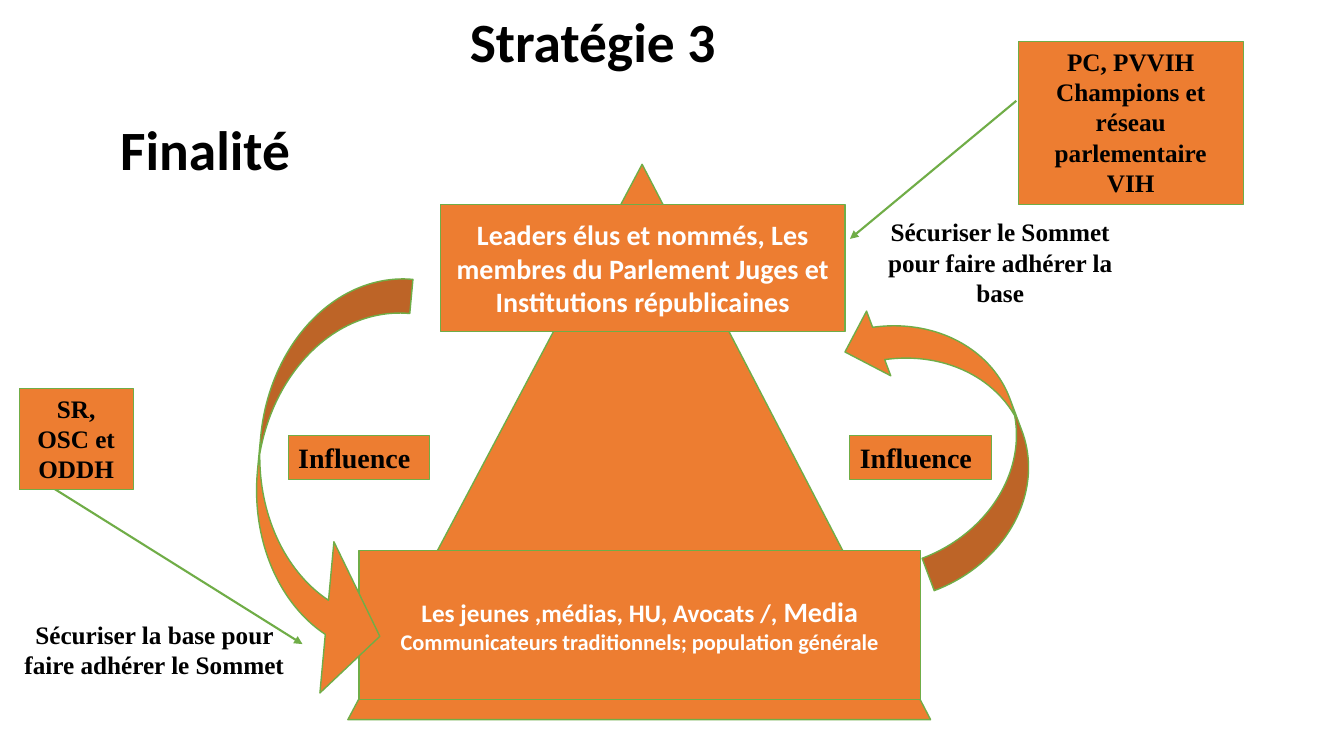
from dataclasses import dataclass

from lxml import etree
from pptx import Presentation
from pptx.dml.color import RGBColor
from pptx.enum.shapes import MSO_CONNECTOR as CONN, MSO_SHAPE as SHAPE
from pptx.enum.text import MSO_ANCHOR as ANCHOR, PP_ALIGN as ALIGN
from pptx.oxml.ns import qn
from pptx.util import Inches, Pt


@dataclass(frozen=True)
class Theme:
    fill: RGBColor = RGBColor(0xED, 0x7D, 0x31)
    line: RGBColor = RGBColor(0x70, 0xAD, 0x47)
    dark: RGBColor = RGBColor(0, 0, 0)
    light: RGBColor = RGBColor(0xFF, 0xFF, 0xFF)
    sans: str = "Calibri"
    serif: str = "Times New Roman"
    title: float = 39.6
    large: float = 20
    body: float = 18
    small: float = 16


class Board:
    def __init__(self, slide, theme):
        self.slide, self.theme = slide, theme

    def set_text(self, sp, paragraphs, font, color, anchor=ANCHOR.TOP,
                 align=ALIGN.CENTER, spacing=None):
        """Each paragraph is a list of (text, size) runs."""
        tf = sp.text_frame
        tf.word_wrap = True
        tf.vertical_anchor = anchor
        for i, runs in enumerate(paragraphs):
            p = tf.add_paragraph() if i else tf.paragraphs[0]
            p.alignment = align
            if spacing:
                p.line_spacing = spacing
            for text, size in runs:
                r = p.add_run()
                r.text = text
                r.font.name, r.font.size, r.font.bold = font, Pt(size), True
                r.font.color.rgb = color

    def shape(self, kind, box, width=1, rotation=0, adjustments=()):
        sp = self.slide.shapes.add_shape(kind, *map(Inches, box))
        sp.shadow.inherit = False
        sp.fill.solid()
        sp.fill.fore_color.rgb = self.theme.fill
        sp.line.color.rgb = self.theme.line
        sp.line.width = Pt(width)
        sp.rotation = rotation
        for i, value in enumerate(adjustments):
            sp.adjustments[i] = value
        return sp

    def panel(self, box, paragraphs):
        sp = self.shape(SHAPE.RECTANGLE, box)
        self.set_text(sp, paragraphs, self.theme.sans, self.theme.light, ANCHOR.MIDDLE)

    def label(self, box, text, size, align=ALIGN.CENTER):
        sp = self.shape(SHAPE.RECTANGLE, box, 0.75)
        self.set_text(sp, [[(text, size)]], self.theme.serif, self.theme.dark, align=align)

    def note(self, box, text):
        sp = self.slide.shapes.add_textbox(*map(Inches, box))
        self.set_text(sp, [[(text, self.theme.body)]], self.theme.serif, self.theme.dark)

    def heading(self, box, text, spacing):
        sp = self.slide.shapes.add_textbox(*map(Inches, box))
        self.set_text(sp, [[(text, self.theme.title)]], self.theme.sans,
                      self.theme.dark, ANCHOR.MIDDLE, spacing=spacing)

    def arrow(self, start, end):
        c = self.slide.shapes.add_connector(CONN.STRAIGHT, *map(Inches, start + end))
        c.line.color.rgb = self.theme.line
        c.line.width = Pt(1.5)
        props = c.element.spPr
        etree.SubElement(props.find(qn("a:ln")), qn("a:tailEnd"), type="triangle")
        etree.SubElement(props, qn("a:effectLst"))


def main():
    prs = Presentation()
    prs.slide_width, prs.slide_height = Inches(13.33), Inches(7.5)
    theme = Theme()
    board = Board(prs.slides.add_slide(prs.slide_layouts[6]), theme)

    # Title and pyramid
    board.heading((2.4, 0.14, 7.08, 0.6), "Stratégie 3 ", 0.9)
    board.shape(SHAPE.ISOSCELES_TRIANGLE, (3.45, 1.63, 5.78, 5.51), adjustments=[0.505])

    # Actors securing the summit
    board.arrow((10.08, 1), (8.43, 2.37))
    board.note((8.48, 2.1, 2.88, 1.01), "Sécuriser le Sommet pour faire adhérer la base")
    board.label((10.1, 0.41, 2.23, 1.62),
                "PC, PVVIH Champions et réseau parlementaire VIH", theme.body)

    # Actors securing the base
    board.arrow((0.54, 4.85), (3, 6.39))
    board.label((0.19, 3.85, 1.13, 1.01), "SR, OSC et ODDH", theme.body)
    board.note((0.09, 6.09, 2.88, 0.71), "Sécuriser la base pour faire adhérer le Sommet")

    # Pyramid levels
    board.panel((4.37, 2.03, 4.01, 1.26),
                [[("Leaders élus et nommés, Les membres du Parlement Juges et "
                   "Institutions républicaines", theme.large)]])
    board.panel((3.56, 5.46, 5.57, 1.48),
                [[("Les jeunes ,médias, HU, Avocats /, ", theme.body),
                  ("Media", theme.large)],
                 [("Communicateurs traditionnels; population générale", theme.small)]])

    # Influence loop
    for left in (2.86, 8.43):
        board.label((left, 4.32, 1.4, 0.44), "Influence", theme.large, ALIGN.LEFT)
    board.shape(SHAPE.CURVED_UP_ARROW, (7.97, 3.59, 2.87, 1.37), rotation=249.5)
    board.shape(SHAPE.CURVED_RIGHT_ARROW, (2.54, 2.7, 1.36, 4.31), rotation=5.3,
                adjustments=[0.25, 1.108, 0.397])

    # Purpose heading
    board.heading((0.03, 1.25, 4.01, 0.6), "Finalité", 0.7)

    prs.save("out.pptx")


if __name__ == "__main__":
    main()
